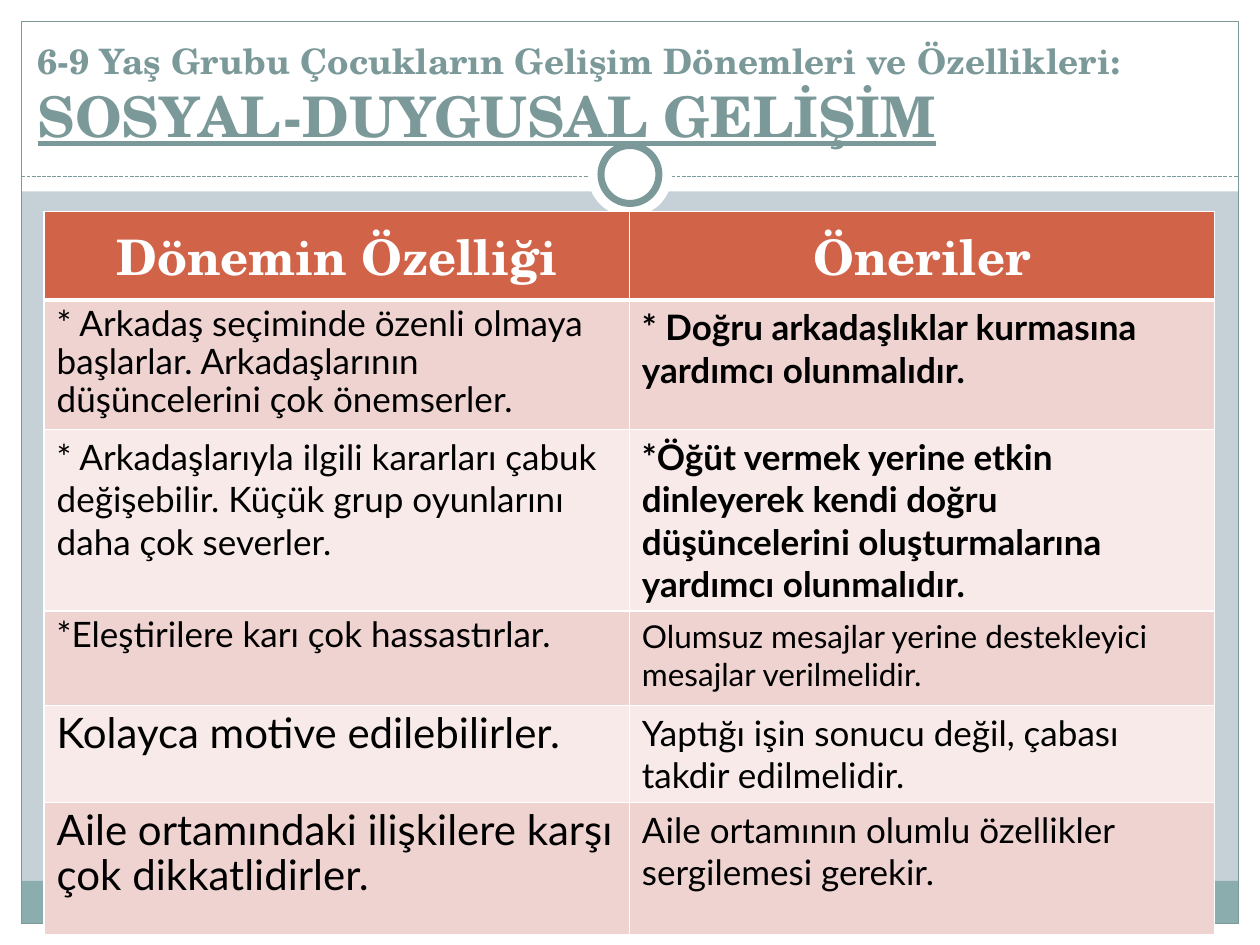
from pptx import Presentation
from pptx.dml.color import RGBColor
from pptx.enum.dml import MSO_LINE
from pptx.enum.shapes import MSO_CONNECTOR, MSO_SHAPE
from pptx.enum.text import MSO_ANCHOR, MSO_AUTO_SIZE, PP_ALIGN
from pptx.oxml.ns import qn
from pptx.util import Inches, Pt
from lxml.etree import SubElement

WHITE = RGBColor(0xFF, 0xFF, 0xFF)
BLACK = RGBColor(0x00, 0x00, 0x00)
BACKGROUND = RGBColor(0xC5, 0xD1, 0xD7)
TEAL = RGBColor(0x7C, 0x99, 0x9A)
FOOTER = RGBColor(0x8C, 0xAD, 0xAE)
HEADER = RGBColor(0xD1, 0x63, 0x49)
BANDS = RGBColor(0xEE, 0xD3, 0xD0), RGBColor(0xF7, 0xEA, 0xE9)
HEADING_FONT, BODY_FONT = "TeX Gyre Schola", "Lato"

TITLE = ("6-9 Yaş Grubu Çocukların Gelişim Dönemleri ve Özellikleri:"
         "\vSOSYAL-DUYGUSAL GELİŞİM")
HEADINGS = "Dönemin Özelliği", "Öneriler"
# Row height in percent, then per cell: text, size, bold, line spacing
ROWS = [
    (13.73,
     ("* Arkadaş seçiminde özenli olmaya başlarlar. Arkadaşlarının "
      "düşüncelerini çok önemserler.", 20, False, 0.9),
     ("* Doğru arkadaşlıklar kurmasına yardımcı olunmalıdır.", 20, True, 1.0)),
    (18.93,
     ("* Arkadaşlarıyla ilgili kararları çabuk değişebilir. Küçük grup "
      "oyunlarını daha çok severler.", 20, False, 1.0),
     ("*Öğüt vermek yerine etkin dinleyerek kendi doğru düşüncelerini "
      "oluşturmalarına yardımcı olunmalıdır.", 20, True, 1.0)),
    (10,
     ("*Eleştirilere karı çok hassastırlar.", 20, False, 0.9),
     ("Olumsuz mesajlar yerine destekleyici mesajlar verilmelidir.",
      18, False, 1.0)),
    (9.73,
     ("Kolayca motive edilebilirler.", 24, False, 0.9),
     ("Yaptığı işin sonucu değil, çabası takdir edilmelidir.",
      20, False, 1.0)),
    (14,
     ("Aile ortamındaki ilişkilere karşı çok dikkatlidirler.",
      24, False, 0.9),
     ("Aile ortamının olumlu özellikler sergilemesi gerekir.",
      20, False, 1.0)),
]


class SlideBuilder:
    """Draws on one slide; lengths are percent of its width and height."""

    def __init__(self, presentation):
        self.width = presentation.slide_width
        self.height = presentation.slide_height
        self.slide = presentation.slides.add_slide(presentation.slide_layouts[5])
        self.shapes = self.slide.shapes
        fill = self.slide.background.fill
        fill.solid()
        fill.fore_color.rgb = BACKGROUND

    def x(self, percent):
        return round(self.width * percent / 100)

    def y(self, percent):
        return round(self.height * percent / 100)

    def box(self, left, top, width, height):
        return self.x(left), self.y(top), self.x(width), self.y(height)

    def shape(self, kind, place, fill=None, line_width=None):
        shape = self.shapes.add_shape(kind, *self.box(*place))
        shape.shadow.inherit = False
        if fill is None:
            shape.fill.background()
        else:
            shape.fill.solid()
            shape.fill.fore_color.rgb = fill
        if line_width is None:
            shape.line.fill.background()
        else:
            shape.line.color.rgb = TEAL
            shape.line.width = Pt(line_width)

    def dashed_line(self, left, right, top):
        line = self.shapes.add_connector(
            MSO_CONNECTOR.STRAIGHT,
            self.x(left), self.y(top), self.x(right), self.y(top))
        line.line.color.rgb = TEAL
        line.line.width = Pt(0.75)
        line.line.dash_style = MSO_LINE.SQUARE_DOT
        SubElement(line._element.spPr, qn("a:effectLst"))

    def format_run(self, run, font, size, color, bold):
        run.font.name = font
        run.font.size = Pt(size)
        run.font.color.rgb = color
        run.font.bold = bold

    def title(self, text, place, sizes):
        title = self.shapes.title
        title.left, title.top, title.width, title.height = self.box(*place)
        # Bring the title in front of the frame
        self.shapes._spTree.append(title._element)
        frame = title.text_frame
        frame.text = text
        frame.word_wrap = True
        frame.auto_size = MSO_AUTO_SIZE.NONE
        frame.vertical_anchor = MSO_ANCHOR.BOTTOM
        paragraph = frame.paragraphs[0]
        paragraph.alignment = PP_ALIGN.LEFT
        for run, size in zip(paragraph.runs, sizes):
            self.format_run(run, HEADING_FONT, size, TEAL, True)
        paragraph.runs[-1].font.underline = True

    def borders(self, cell, bottom, top):
        properties = cell._tc.get_or_add_tcPr()
        for side, width in zip("LRTB", (1, 1, top, bottom)):
            line = SubElement(properties, qn(f"a:ln{side}"), w=str(Pt(width)))
            fill = SubElement(line, qn("a:solidFill"))
            SubElement(fill, qn("a:srgbClr"), val=str(WHITE))

    def cell(self, cell, content, fill, font, color, align, edges=(1, 1)):
        text, size, bold, spacing = content
        self.borders(cell, *edges)
        cell.fill.solid()
        cell.fill.fore_color.rgb = fill
        cell.text_frame.text = text
        paragraph = cell.text_frame.paragraphs[0]
        paragraph.alignment = align
        paragraph.line_spacing = spacing
        self.format_run(paragraph.runs[0], font, size, color, bold)

    def table(self, left, top, width, header_height, headings, rows):
        heights = [header_height] + [row[0] for row in rows]
        table = self.shapes.add_table(
            len(heights), len(headings),
            *self.box(left, top, width, sum(heights))).table
        for row, height in zip(table.rows, heights):
            row.height = self.y(height)
        for column, heading in enumerate(headings):
            self.cell(table.cell(0, column), (heading, 28, True, 1.0),
                      HEADER, HEADING_FONT, WHITE, PP_ALIGN.CENTER, (3, 1))
        for number, (_, *contents) in enumerate(rows, 1):
            for column, content in enumerate(contents):
                self.cell(table.cell(number, column), content,
                          BANDS[(number - 1) % 2], BODY_FONT, BLACK,
                          PP_ALIGN.LEFT, (1, 3 if number == 1 else 1))


def main():
    presentation = Presentation()
    presentation.slide_width, presentation.slide_height = Inches(10), Inches(7.5)
    builder = SlideBuilder(presentation)

    # White margins, footer band and outer frame
    margin_x, margin_y = 1.7, 2.27
    for place in ((0, 100 - margin_y, 100, margin_y), (0, 0, 100, 20.27),
                  (0, 0, margin_x, 100), (100 - margin_x, 0, margin_x, 100)):
        builder.shape(MSO_SHAPE.RECTANGLE, place, WHITE)
    inner_width = 100 - 2 * margin_x
    builder.shape(MSO_SHAPE.RECTANGLE, (margin_x, 93.2, inner_width, 4.53), FOOTER)
    builder.shape(MSO_SHAPE.RECTANGLE,
                  (margin_x, margin_y, inner_width, 100 - 2 * margin_y),
                  line_width=0.75)

    # Divider with a ring
    builder.dashed_line(margin_x, 100 - margin_x, 18.67)
    builder.shape(MSO_SHAPE.OVAL, (46.65, 14, 6.7, 8.93), WHITE)
    builder.shape(MSO_SHAPE.OVAL, (47.7, 15.4, 4.6, 6.13), WHITE, 4)

    # Title and table
    builder.title(TITLE, (2, 0.67, 98, 15.73), (20, 32))
    builder.table(3.5, 22.4, 92.9, 8.53, HEADINGS, ROWS)
    presentation.save("out.pptx")


if __name__ == "__main__":
    main()
